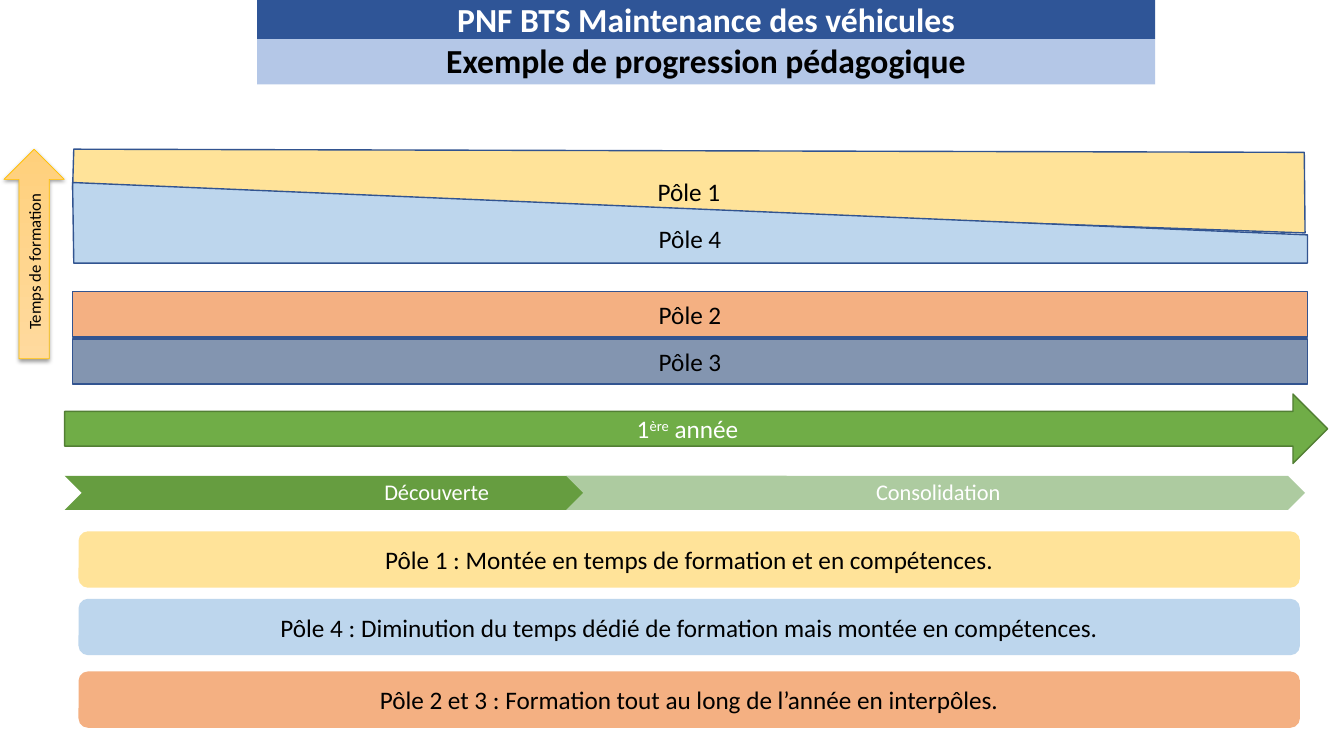
from lxml.etree import SubElement
from pptx import Presentation
from pptx.dml.color import RGBColor
from pptx.enum.shapes import MSO_SHAPE
from pptx.enum.text import MSO_ANCHOR, PP_ALIGN
from pptx.oxml.ns import qn
from pptx.util import Cm, Pt

COLOURS = {
    "title": "2F5597", "subtitle": "B4C7E7", "black": "000000", "white": "FFFFFF",
    "pole1": "FFE399", "pole2": "F4B082", "pole3": "8395B0", "pole4": "BDD6ED",
    "pole_line": "325490", "year": "70AD47", "year_line": "527F34",
    "discovery": "669D40", "consolidation": "ADCBA0",
    "time_start": "FFDA9E", "time_end": "FFD07C", "time_line": "FFC000",
}


def colour(name):
    return RGBColor.from_string(COLOURS[name])


def paint(shape, fill, line=None, width=1):
    shape.shadow.inherit = False
    if fill:
        shape.fill.solid()
        shape.fill.fore_color.rgb = colour(fill)
    if line:
        shape.line.color.rgb = colour(line)
        shape.line.width = Pt(width)
    else:
        shape.line.fill.background()


def write(shape, text, size=18, font_colour="black", bold=False, anchor=MSO_ANCHOR.MIDDLE):
    frame = shape.text_frame
    frame.word_wrap = True
    frame.vertical_anchor = anchor
    paragraph = frame.paragraphs[0]
    paragraph.alignment = PP_ALIGN.CENTER
    font = paragraph.font
    font.name, font.size, font.bold = "Calibri", Pt(size), bold
    font.color.rgb = colour(font_colour)
    if text:
        paragraph.add_run().text = text
    return paragraph


def add_block(slide, preset, box, fill, line=None):
    block = slide.shapes.add_shape(preset, *(Cm(length) for length in box))
    paint(block, fill, line)
    return block


def add_outline(slide, left, top, points, fill):
    corners = [(Cm(left + x), Cm(top + y)) for x, y in points]
    builder = slide.shapes.build_freeform(*corners[0], scale=1.0)
    builder.add_line_segments(corners[1:], close=True)
    outline = builder.convert_to_shape()
    paint(outline, fill, "pole_line")
    return outline


# Two title bands
def add_header(slide, left, top, width, height):
    title_height = 1.02
    bands = [
        ("PNF BTS Maintenance des véhicules", "title", "white", 0, title_height),
        ("Exemple de progression pédagogique", "subtitle", "black",
         title_height, height - title_height),
    ]
    for text, fill, font_colour, offset, band_height in bands:
        band = add_block(slide, MSO_SHAPE.RECTANGLE,
                         (left, top + offset, width, band_height), fill)
        heading = write(band, text, 24, font_colour, True, MSO_ANCHOR.TOP)
        heading.line_spacing = 0.9


# Arrow for the year, with a raised ordinal ending
def add_year(slide, *box):
    year = add_block(slide, MSO_SHAPE.RIGHT_ARROW, box, "year", "year_line")
    label = write(year, "", font_colour="white")
    for text in ("1", "ère", " année"):
        run = label.add_run()
        run.text = text
        if text == "ère":
            run._r.get_or_add_rPr().set("baseline", "30000")


# Chevrons for the two phases, overlapping at the join
def add_phases(slide, left, top, width, height):
    phase_width = 18.62
    phases = [("Découverte", "discovery", left),
              ("Consolidation", "consolidation", left + width - phase_width)]
    for text, fill, phase_left in phases:
        phase = add_block(slide, MSO_SHAPE.CHEVRON,
                          (phase_left, top, phase_width, height), fill)
        frame = phase.text_frame
        frame.margin_left = Cm(0.18)
        frame.margin_right = frame.margin_top = frame.margin_bottom = Cm(0.05)
        write(phase, text, 16, "white").line_spacing = 0.9


# Training time of each pole over the year
def add_poles(slide, left, top, width, height):
    rising = [(0, 1.02), (0.03, 0), (width - 0.08, 0.08), (width - 0.06, 2.11)]
    write(add_outline(slide, left, top, rising, "pole1"), "Pôle 1")

    bar_height, bar_step = 1.14, 1.19
    bar_top = top + height - bar_height
    for row, (text, fill) in enumerate([("Pôle 3", "pole3"), ("Pôle 2", "pole2")]):
        bar = add_block(slide, MSO_SHAPE.RECTANGLE,
                        (left, bar_top - row * bar_step, width, bar_height),
                        fill, "pole_line")
        write(bar, text)

    falling = [(0.03, 2.87), (0, 0.84), (width, 2.16), (width, 2.87)]
    pole4 = add_outline(slide, left, top, falling, "pole4")
    pole4.text_frame.margin_top = Cm(0.9)
    write(pole4, "Pôle 4")


# Upward arrow for training time: a right arrow turned about its centre
def add_time_arrow(slide, left, top, width, height):
    shift = (width - height) / 2
    arrow = add_block(slide, MSO_SHAPE.RIGHT_ARROW,
                      (left + shift, top - shift, height, width), None)
    arrow.rotation = 270
    paint(arrow, None, "time_line", 0.5)
    arrow.fill.gradient()
    arrow.fill.gradient_angle = 0
    for stop, name in zip(arrow.fill.gradient_stops, ("time_start", "time_end")):
        stop.color.rgb = colour(name)
    effects = arrow._element.spPr.find(qn("a:effectLst"))
    shadow = SubElement(effects, qn("a:outerShdw"), blurRad=str(Pt(3.1)),
                        dist=str(Pt(1.6)), dir="5400000", rotWithShape="0")
    shade = SubElement(shadow, qn("a:srgbClr"), val=COLOURS["black"])
    SubElement(shade, qn("a:alpha"), val="38000")
    write(arrow, "Temps de formation", 12)


# Rounded summary bands
def add_summary(slide, left, top, width, height):
    band_height = 1.42
    bands = [
        ("Pôle 1 : Montée en temps de formation et en compétences.", "pole1", 0),
        ("Pôle 4 : Diminution du temps dédié de formation mais montée en compétences.",
         "pole4", 1.7),
        ("Pôle 2 et 3 : Formation tout au long de l’année en interpôles.",
         "pole2", height - band_height),
    ]
    for text, fill, offset in bands:
        band = add_block(slide, MSO_SHAPE.ROUNDED_RECTANGLE,
                         (left, top + offset, width, band_height), fill)
        write(band, text)


def main():
    deck = Presentation()
    deck.slide_width, deck.slide_height = Cm(33.87), Cm(19.05)
    slide = deck.slides.add_slide(deck.slide_layouts[6])
    add_header(slide, 6.48, -0.03, 22.63, 2.16)
    add_year(slide, 1.63, 9.93, 31.83, 1.75)
    add_phases(slide, 1.63, 11.99, 31.26, 0.86)
    add_poles(slide, 1.83, 3.76, 31.12, 5.92)
    add_time_arrow(slide, 0.1, 3.76, 1.52, 5.28)
    add_summary(slide, 1.98, 13.39, 30.78, 4.95)
    deck.save("out.pptx")


if __name__ == "__main__":
    main()
